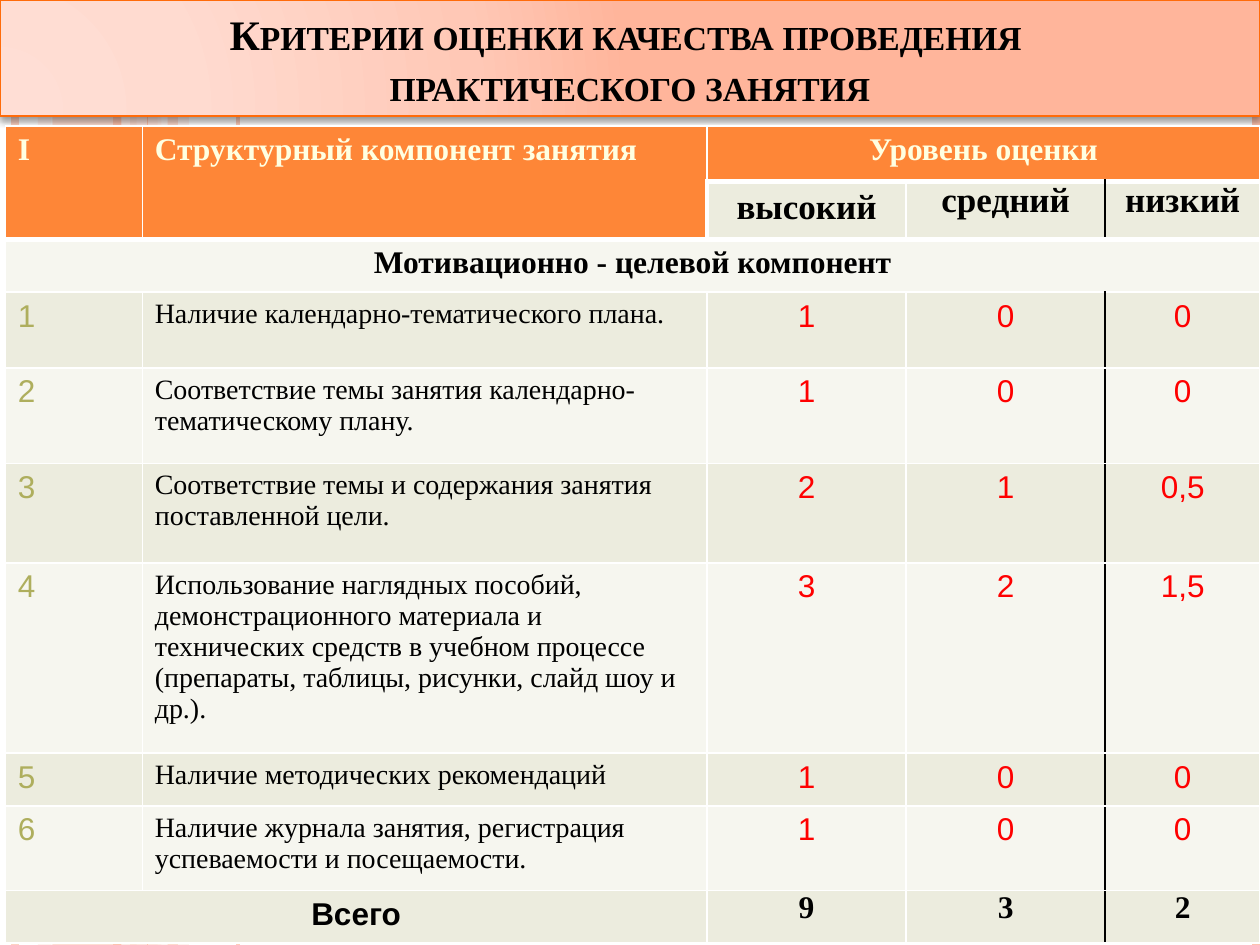
"""Build a slide with the assessment criteria table for a practical lesson."""
from dataclasses import dataclass
from typing import Any

import pptx
import pptx.dml.color
import pptx.enum.shapes
import pptx.enum.text
import pptx.oxml
import pptx.oxml.ns
import pptx.util

Pt = pptx.util.Pt
RGBColor = pptx.dml.color.RGBColor
ALIGN = pptx.enum.text.PP_ALIGN

BLACK = RGBColor(0x00, 0x00, 0x00)
WHITE = RGBColor(0xFF, 0xFF, 0xFF)
RED = RGBColor(0xFF, 0x00, 0x00)
OLIVE = RGBColor(0xAE, 0xAE, 0x5D)
CREAM = RGBColor(0xFF, 0xFF, 0xE1)
ORANGE = RGBColor(0xFE, 0x86, 0x37)
DEEP_ORANGE = RGBColor(0xFF, 0x6B, 0x0A)
PEACH = RGBColor(0xFE, 0xC3, 0xAE)
LIGHT_PEACH = RGBColor(0xFF, 0xD9, 0xCE)
PALE_PEACH = RGBColor(0xFF, 0xED, 0xE8)
BAND_DARK = RGBColor(0xEC, 0xEC, 0xDE)
BAND_LIGHT = RGBColor(0xF6, 0xF6, 0xEF)
TITLE_STOPS = (
    (0, RGBColor(0xFF, 0xDE, 0xD5)),
    (30, RGBColor(0xFF, 0xDB, 0xD0)),
    (75, RGBColor(0xFF, 0xC8, 0xB6)),
    (100, RGBColor(0xFF, 0xB5, 0x9B)),
)
SERIF, SANS = "Times New Roman", "Arial"
SLIDE_W, SLIDE_H = 720, 540
COL_WIDTHS = (78.3, 322.7, 113.8, 113.8, 88.5)
ROW_HEIGHTS = (31.7, 33.1, 30.2, 43.2, 54.7, 56.9, 108.7, 30.2, 48.2, 30.2)
NUMBER, NAME, HIGH, MIDDLE, LOW = range(5)
HEAD, LEVELS, SECTION, FIRST = range(4)
TOTAL = len(ROW_HEIGHTS) - 1


@dataclass
class Stripe:
    x: float
    width: float
    color: RGBColor
    alpha: int


@dataclass
class Criterion:
    name: str
    scores: tuple[str, str, str]


BANDS = (
    Stripe(30, 48, PEACH, 54),
    Stripe(21.6, 8, LIGHT_PEACH, 36),
    Stripe(77.8, 14.4, LIGHT_PEACH, 70),
    Stripe(90, 18, PALE_PEACH, 71),
    Stripe(95.8, 5.8, PEACH, 51),
)
RULES = (
    Stripe(8.6, 4.5, PEACH, 73),
    Stripe(72, 4.5, PALE_PEACH, 83),
    Stripe(67, 4.5, PEACH, 100),
    Stripe(136, 2.25, PEACH, 82),
    Stripe(84.2, 0.75, PEACH, 100),
    Stripe(717.8, 4.5, PEACH, 100),
)
CRITERIA = (
    Criterion("Наличие календарно-тематического плана.", ("1", "0", "0")),
    Criterion("Соответствие темы занятия календарно-тематическому плану.", ("1", "0", "0")),
    Criterion("Соответствие темы и содержания занятия поставленной цели.", ("2", "1", "0,5")),
    Criterion(
        "Использование наглядных пособий, демонстрационного материала и технических средств "
        "в учебном процессе (препараты, таблицы, рисунки, слайд шоу и др.).",
        ("3", "2", "1,5"),
    ),
    Criterion("Наличие методических рекомендаций", ("1", "0", "0")),
    Criterion("Наличие журнала занятия, регистрация успеваемости и посещаемости.", ("1", "0", "0")),
)


def xml(tag: str, body: str) -> Any:
    ns = pptx.oxml.ns.nsdecls("a")
    name = tag.split()[0]
    return pptx.oxml.parse_xml(f"<a:{tag} {ns}>{body}</a:{name}>")


def write(tf: Any, text: str, *, size: float = 18, font: str = SERIF, color: RGBColor = BLACK,
          bold: bool = False, align: Any = ALIGN.LEFT, small_caps: bool = False) -> None:
    p = tf.paragraphs[0]
    p.alignment = align
    for i, line in enumerate(text.split("\n")):
        if i:
            p.add_line_break()
        r = p.add_run()
        r.text = line
        r.font.size, r.font.name, r.font.bold = Pt(size), font, bold
        r.font.color.rgb = color
        if small_caps:
            r.font._element.set("cap", "small")


def set_alpha(sp: Any, alpha: int) -> None:
    if alpha < 100:
        clr = next(sp._element.spPr.iter(pptx.oxml.ns.qn("a:srgbClr")))
        clr.append(xml(f'alpha val="{alpha * 1000}"', ""))


def add_band(s: Any, band: Stripe) -> None:
    sp = s.shapes.add_shape(pptx.enum.shapes.MSO_SHAPE.RECTANGLE,
                            Pt(band.x), 0, Pt(band.width), Pt(SLIDE_H))
    sp.shadow.inherit = False
    sp.fill.solid()
    sp.fill.fore_color.rgb = band.color
    sp.line.fill.background()
    set_alpha(sp, band.alpha)


def add_rule(s: Any, rule: Stripe) -> None:
    sp = s.shapes.add_connector(pptx.enum.shapes.MSO_CONNECTOR.STRAIGHT,
                                Pt(rule.x), 0, Pt(rule.x), Pt(SLIDE_H))
    sp.line.width = Pt(rule.width)
    sp.line.color.rgb = rule.color
    sp._element.spPr.append(xml("effectLst", ""))
    set_alpha(sp, rule.alpha)


def format_title(s: Any) -> None:
    sp = s.shapes.title
    s.shapes._spTree.append(sp._element)
    sp.left, sp.top, sp.width, sp.height = 0, 0, Pt(SLIDE_W), Pt(66.2)
    stops = "".join(f'<a:gs pos="{pos * 1000}"><a:srgbClr val="{color}"/></a:gs>'
                    for pos, color in TITLE_STOPS)
    sp._element.spPr.append(xml(
        "gradFill", f'<a:gsLst>{stops}</a:gsLst><a:path path="circle">'
        '<a:fillToRect l="5000" t="100000" r="120000" b="10000"/></a:path>'))
    sp.line.color.rgb = DEEP_ORANGE
    sp.line.width = Pt(1)
    sp._element.spPr.append(xml(
        "effectLst", f'<a:outerShdw blurRad="{Pt(4)}" dist="{Pt(2)}" dir="5400000">'
        f'<a:srgbClr val="{BLACK}"><a:alpha val="40000"/></a:srgbClr></a:outerShdw>'))
    tf = sp.text_frame
    tf.word_wrap = True
    tf.auto_size = pptx.enum.text.MSO_AUTO_SIZE.NONE
    tf.vertical_anchor = pptx.enum.text.MSO_ANCHOR.BOTTOM
    write(tf, "Критерии оценки качества проведения \nпрактического занятия",
          size=24, bold=True, align=ALIGN.CENTER, small_caps=True)


def style_cell(cell: Any, row: int, col: int) -> None:
    tight = (row == LEVELS and col > HIGH) or (row == TOTAL and col >= HIGH)
    cell.margin_left = cell.margin_right = Pt(5 if tight else 7.2)
    cell.margin_top = cell.margin_bottom = Pt(0 if tight else 3.6)
    divided = row not in (HEAD, SECTION)
    edges = {
        "L": (3 if (row, col) == (LEVELS, HIGH) else 1, divided and col == LOW),
        "R": (1, divided and col == MIDDLE),
        "T": (3 if row in (LEVELS, SECTION) else 1, False),
        "B": (3 if row == HEAD else 1, False),
    }
    for side, (width, dark) in edges.items():
        cell._tc.get_or_add_tcPr().append(xml(
            f'ln{side} w="{Pt(width)}"',
            f'<a:solidFill><a:srgbClr val="{BLACK if dark else WHITE}"/></a:solidFill>'))
    cell.fill.solid()
    cell.fill.fore_color.rgb = ORANGE if row == HEAD else BAND_DARK if row % 2 else BAND_LIGHT


def add_criteria_table(s: Any) -> None:
    tbl = s.shapes.add_table(len(ROW_HEIGHTS), len(COL_WIDTHS), Pt(3), Pt(72),
                             Pt(sum(COL_WIDTHS)), Pt(sum(ROW_HEIGHTS))).table
    for column, width in zip(tbl.columns, COL_WIDTHS):
        column.width = Pt(width)
    for line, height in zip(tbl.rows, ROW_HEIGHTS):
        line.height = Pt(height)
    for start, end in (((HEAD, NUMBER), (LEVELS, NUMBER)), ((HEAD, NAME), (LEVELS, NAME)),
                       ((HEAD, HIGH), (HEAD, LOW)), ((SECTION, NUMBER), (SECTION, LOW)),
                       ((TOTAL, NUMBER), (TOTAL, NAME))):
        tbl.cell(*start).merge(tbl.cell(*end))
    for row in range(len(ROW_HEIGHTS)):
        for col in range(len(COL_WIDTHS)):
            if not tbl.cell(row, col).is_spanned:
                style_cell(tbl.cell(row, col), row, col)

    def put(row: int, col: int, text: str, **fmt: Any) -> None:
        write(tbl.cell(row, col).text_frame, text, **fmt)

    strong = dict(bold=True, align=ALIGN.CENTER)
    put(HEAD, NUMBER, "I", color=CREAM, bold=True)
    put(HEAD, NAME, "Структурный компонент занятия", color=CREAM, bold=True)
    put(HEAD, HIGH, "Уровень оценки", color=CREAM, **strong)
    put(SECTION, NUMBER, "Мотивационно - целевой компонент", **strong)
    put(TOTAL, NUMBER, "Всего", font=SANS, **strong)
    for col, (level, total) in enumerate(zip(("высокий", "средний", "низкий"), "932"), HIGH):
        put(LEVELS, col, level, size=20, **strong)
        put(TOTAL, col, total, **strong)
    for i, criterion in enumerate(CRITERIA):
        put(FIRST + i, NUMBER, str(i + 1), font=SANS, color=OLIVE)
        put(FIRST + i, NAME, criterion.name, size=16)
        for col, score in enumerate(criterion.scores, HIGH):
            put(FIRST + i, col, score, font=SANS, color=RED, align=ALIGN.CENTER)


def main() -> None:
    prs = pptx.Presentation()
    prs.slide_width, prs.slide_height = Pt(SLIDE_W), Pt(SLIDE_H)
    s = prs.slides.add_slide(prs.slide_layouts[5])
    for band in BANDS:
        add_band(s, band)
    for rule in RULES:
        add_rule(s, rule)
    format_title(s)
    add_criteria_table(s)
    prs.save("out.pptx")


if __name__ == "__main__":
    main()
